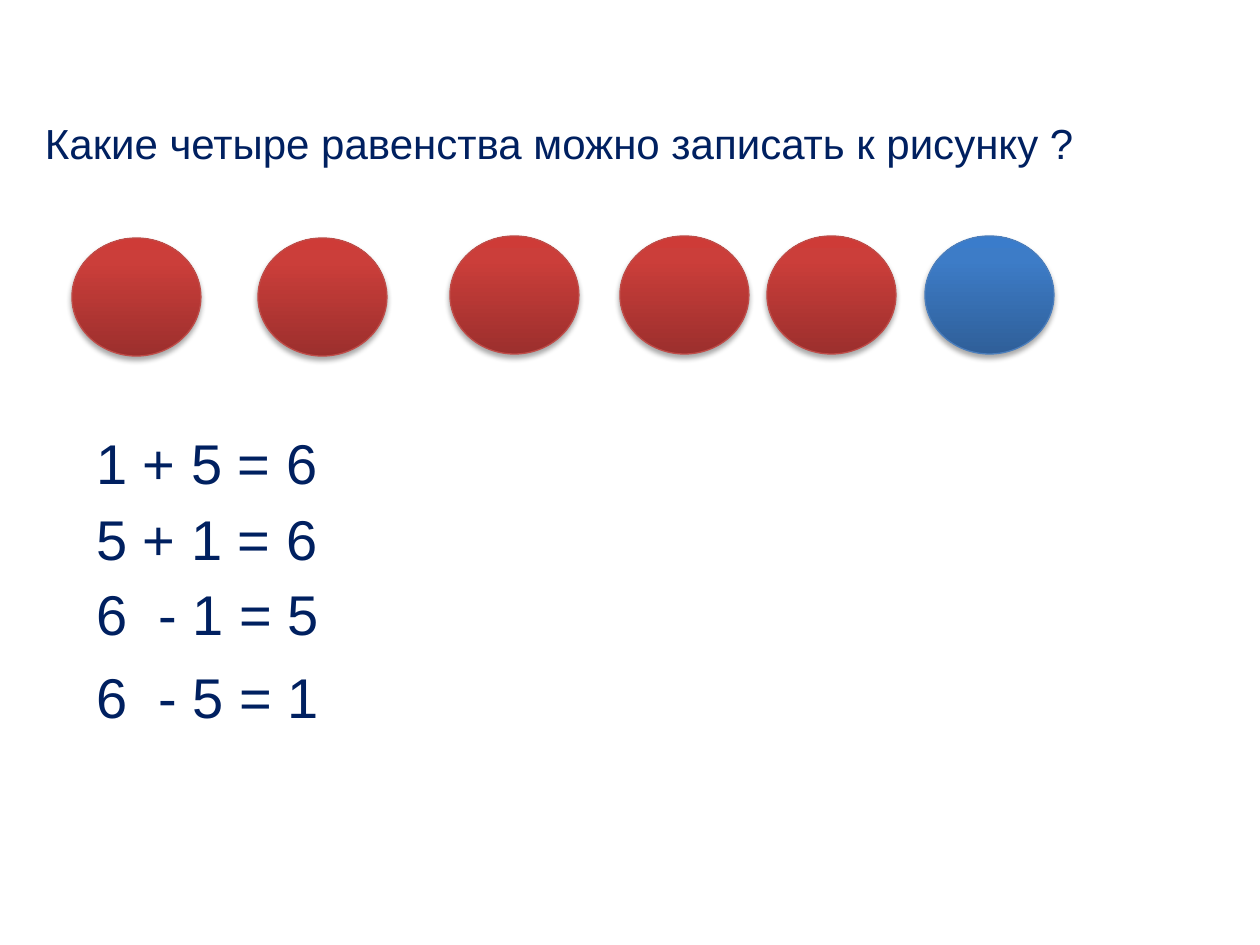
from dataclasses import dataclass

from lxml.etree import SubElement
from pptx import Presentation
from pptx.dml.color import RGBColor
from pptx.enum.shapes import MSO_SHAPE
from pptx.enum.text import MSO_ANCHOR, MSO_AUTO_SIZE, PP_ALIGN
from pptx.oxml.ns import qn
from pptx.util import Inches, Pt

SCALE = Inches(1) / 126


@dataclass(frozen=True)
class Theme:
    font: str = "Arial"
    ink: str = "002060"
    head: int = 24
    sums: int = 32
    # Each ball: dark, middle and light stop, then outline
    red: tuple = ("9C2F2D", "CB3E3A", "CE3B37", "BF4C48")
    blue: tuple = ("2F5F99", "3D7CC7", "3A7CCB", "4B7EBC")


THEME = Theme()


def px(num):
    return round(num * SCALE)


def write(shape, text, size):
    """Fill a text shape with one left-aligned line."""
    frame = shape.text_frame
    frame.word_wrap = True
    frame.auto_size = MSO_AUTO_SIZE.SHAPE_TO_FIT_TEXT
    frame.vertical_anchor = MSO_ANCHOR.TOP
    line = frame.paragraphs[0]
    line.text = text
    line.alignment = PP_ALIGN.LEFT
    font = line.font
    font.name = THEME.font
    font.size = Pt(size)
    font.color.rgb = RGBColor.from_string(THEME.ink)


def add_head(slide, text):
    head = slide.shapes.title
    head.left, head.top, head.width, head.height = map(px, (21, 111, 1103, 63))
    write(head, text, THEME.head)
    head.text_frame.margin_left = px(24)


def add_sum(slide, top, text):
    box = slide.shapes.add_textbox(px(84), px(top), px(266), px(81))
    write(box, text, THEME.sums)


def add_shade(shape):
    """Cast a soft shadow straight down."""
    shape.shadow.inherit = False
    effect = shape._element.spPr.find(qn("a:effectLst"))
    shade = SubElement(effect, qn("a:outerShdw"), blurRad=str(Pt(3.1)),
                       dist=str(Pt(1.8)), dir="5400000", rotWithShape="0")
    tone = SubElement(shade, qn("a:srgbClr"), val="000000")
    SubElement(tone, qn("a:alpha"), val="35000")


def add_ball(slide, left, top, tones):
    ball = slide.shapes.add_shape(
        MSO_SHAPE.OVAL, px(left), px(top), px(129), px(118))
    *stops, edge = tones
    # Vertical blend, dark at the foot
    ball.fill.gradient()
    ball.fill.gradient_angle = 90
    blend = ball._element.spPr.find(qn("a:gradFill")).find(qn("a:gsLst"))
    for old in list(blend):
        blend.remove(old)
    for part, tone in zip((0, 80, 100), stops):
        stop = SubElement(blend, qn("a:gs"), pos=str(part * 1000))
        SubElement(stop, qn("a:srgbClr"), val=tone)
    ball.line.color.rgb = RGBColor.from_string(edge)
    ball.line.width = Pt(0.75)
    add_shade(ball)


def main():
    deck = Presentation()
    deck.slide_width, deck.slide_height = Inches(10), Inches(7.5)
    slide = deck.slides.add_slide(deck.slide_layouts[5])

    # Question
    add_head(slide, "Какие четыре равенства можно записать к рисунку ?")

    # Five red balls and a blue one
    for left, top in ((72, 238), (258, 238), (450, 236), (620, 236), (767, 236)):
        add_ball(slide, left, top, THEME.red)
    add_ball(slide, 925, 236, THEME.blue)

    # Four equations
    sums = {422: "1 + 5 = 6", 498: "5 + 1 = 6", 573: "6  - 1 = 5", 656: "6  - 5 = 1"}
    for top, text in sums.items():
        add_sum(slide, top, text)

    deck.save("out.pptx")


if __name__ == "__main__":
    main()
